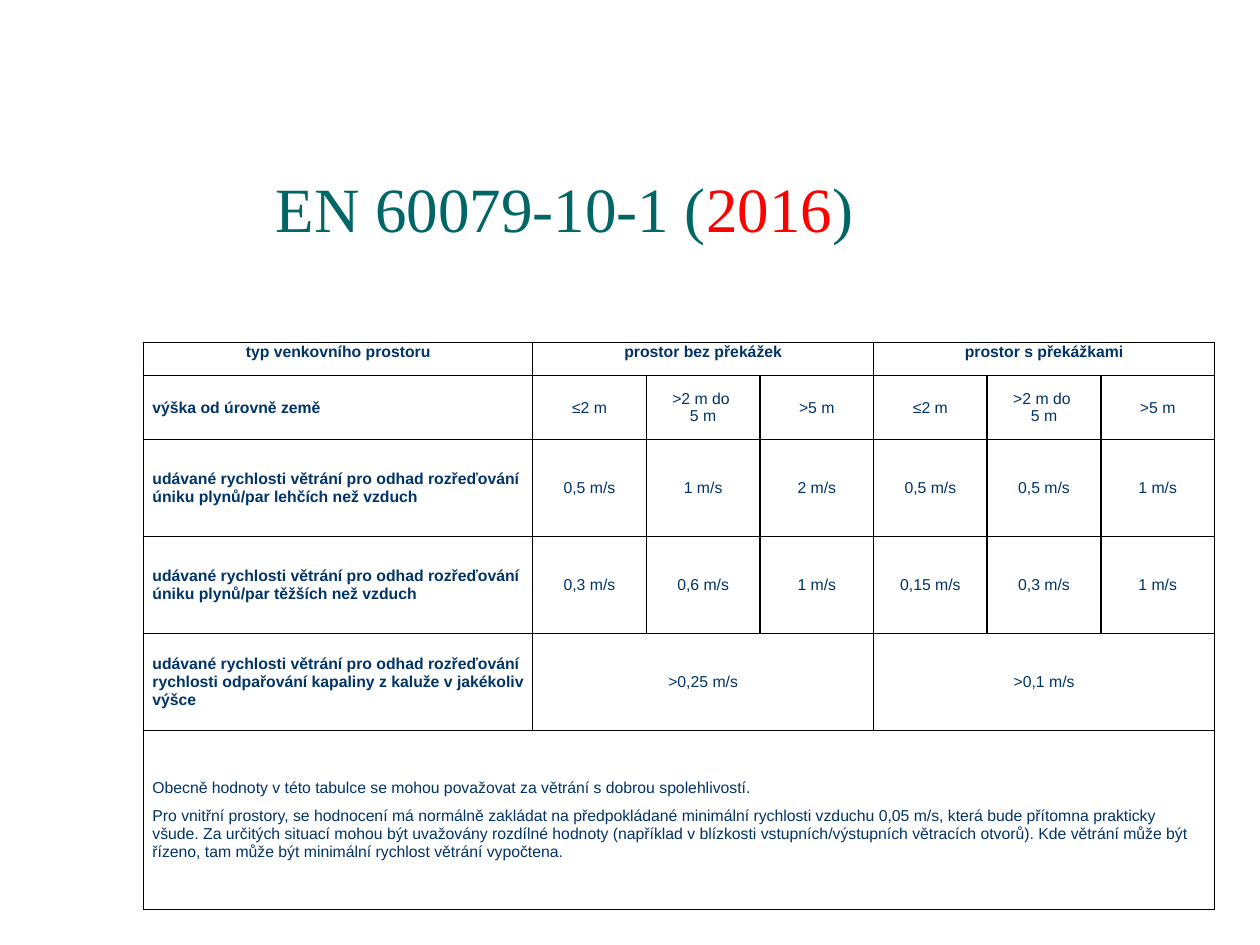
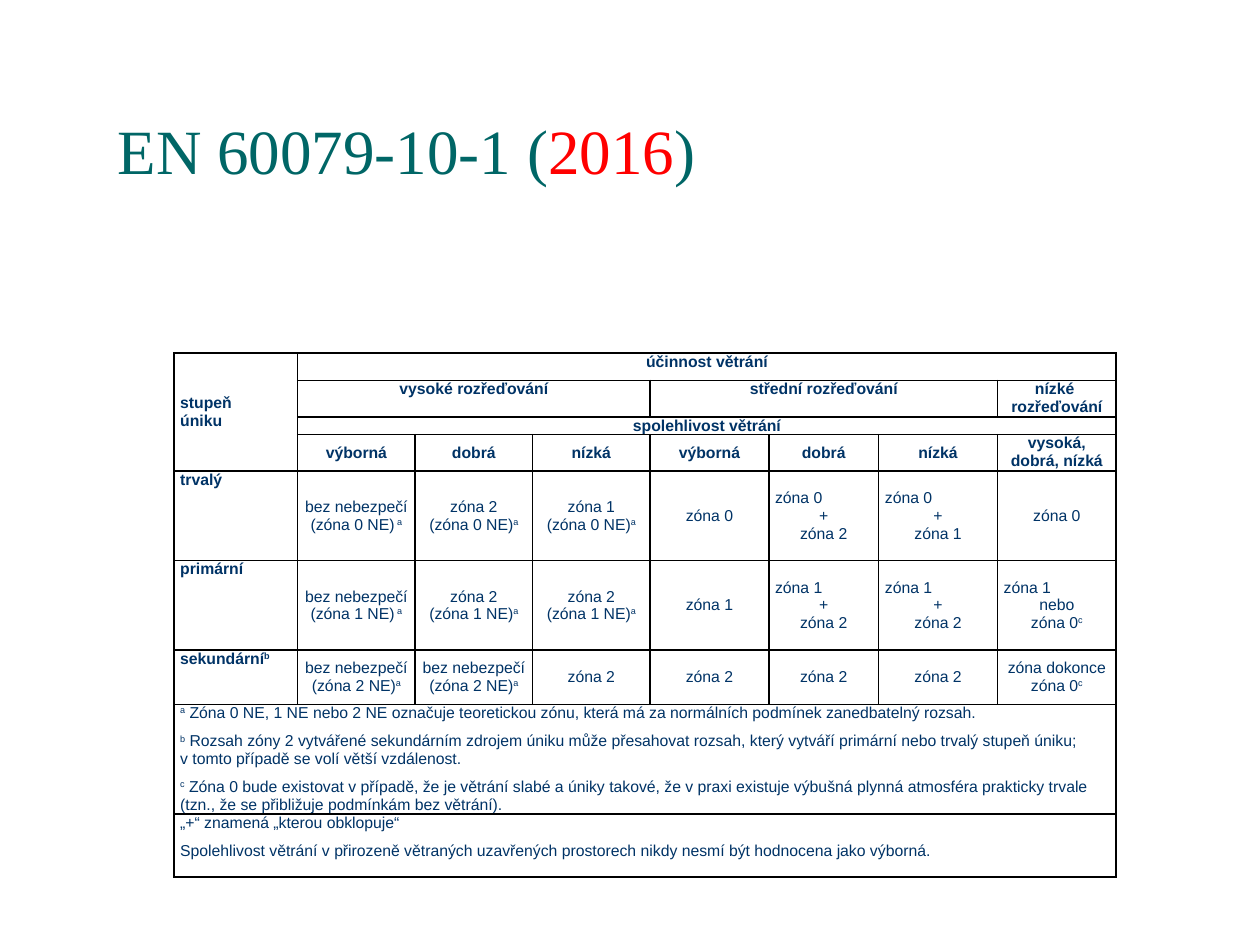
from copy import deepcopy
from dataclasses import dataclass
from enum import Enum

from lxml.etree import SubElement
from pptx import Presentation
from pptx.dml.color import RGBColor
from pptx.enum.shapes import MSO_SHAPE
from pptx.enum.text import MSO_ANCHOR, PP_ALIGN
from pptx.oxml import parse_xml
from pptx.oxml.ns import nsdecls, qn
from pptx.util import Inches, Pt


@dataclass(frozen=True)
class Theme:
    """Colours, fonts and type sizes shared by the slides."""
    heading: RGBColor = RGBColor(0x00, 0x66, 0x66)
    accent: RGBColor = RGBColor(0xFF, 0x00, 0x00)
    body: RGBColor = RGBColor(0x00, 0x33, 0x66)
    border: str = "000000"
    border_width: int = Pt(1)
    heading_font: str = "Times New Roman"
    body_font: str = "Arial"
    heading_size: int = Pt(36)
    body_size: int = Pt(9)
    cell_gap: int = Pt(3)
    tab_width: int = Inches(1)
    language: str = "cs-CZ"


class Merged(Enum):
    """Grid positions that belong to a neighbouring cell."""
    LEFT = "left"
    UP = "up"


LEFT, UP = Merged.LEFT, Merged.UP


class Deck:
    """Style and current slide, with one method for each kind of element."""

    def __init__(self, theme):
        self.theme = theme
        self.presentation = Presentation()
        self.presentation.slide_width = Inches(10)
        self.presentation.slide_height = Inches(7.5)
        self.slide = None

    def new_slide(self):
        """Start a blank slide."""
        self.slide = self.presentation.slides.add_slide(self.presentation.slide_layouts[6])

    def run(self, paragraph, text, font, size, color, bold=False):
        """Add one styled run."""
        run = paragraph.add_run()
        run.text = text
        run.font.name, run.font.size, run.font.bold = font, size, bold
        run.font.color.rgb = color
        run._r.rPr.set("lang", self.theme.language)
        return run

    def title(self, left, top, width, height):
        """Add the standard's number with its year accented."""
        theme = self.theme
        heading = self.slide.shapes.add_shape(
            MSO_SHAPE.ROUNDED_RECTANGLE, *map(Inches, (left, top, width, height)))
        heading.adjustments[0] = 0.22
        heading.shadow.inherit = False
        heading.fill.background()
        heading.line.fill.background()
        frame = heading.text_frame
        frame.word_wrap = True
        frame.margin_left = frame.margin_right = Inches(0.06)
        frame.margin_top = frame.margin_bottom = 0
        frame.vertical_anchor = MSO_ANCHOR.BOTTOM
        paragraph = frame.paragraphs[0]
        paragraph.alignment = PP_ALIGN.LEFT
        paragraph.line_spacing = 0.9
        for text, color in (("EN 60079-10-1 (", theme.heading), ("2016", theme.accent),
                            (")", theme.heading)):
            self.run(paragraph, text, theme.heading_font, theme.heading_size, color)

    def rich_text(self, paragraph, text, bold):
        """Write text: carets enclose superscript, a tilde is a no-break space."""
        theme = self.theme
        for part_number, part in enumerate(text.replace("~", chr(160)).split("^")):
            for line_number, line in enumerate(part.split("\n")):
                if line_number:
                    paragraph.add_line_break()
                    paragraph._p[-1].append(deepcopy(run._r.rPr))
                if line:
                    run = self.run(paragraph, line, theme.body_font, theme.body_size,
                                   theme.body, bold)
                    if part_number % 2:
                        run._r.rPr.set("baseline", "30000")

    def borders(self, cell):
        """Draw the four edges of a cell."""
        properties = cell._tc.get_or_add_tcPr()
        for position, edge in enumerate(("lnL", "lnR", "lnT", "lnB")):
            line = parse_xml(f'<a:{edge} {nsdecls("a")} w="{self.theme.border_width}"/>')
            fill = SubElement(line, qn("a:solidFill"))
            SubElement(fill, qn("a:srgbClr")).set("val", self.theme.border)
            properties.insert(position, line)

    def cell_text(self, cell, content, align, anchor, bold, inset):
        """Fill a cell with one paragraph or a list of them."""
        cell.margin_left = cell.margin_right = Inches(inset)
        cell.margin_top = cell.margin_bottom = 0
        cell.vertical_anchor = anchor
        frame = cell.text_frame
        for number, text in enumerate(content if isinstance(content, list) else [content]):
            paragraph = frame.add_paragraph() if number else frame.paragraphs[0]
            paragraph.alignment = align
            paragraph.space_before = paragraph.space_after = self.theme.cell_gap
            paragraph._p.pPr.set("defTabSz", str(self.theme.tab_width))
            self.rich_text(paragraph, text, bold)

    def table(self, left, top, width, height, columns, heights, grid, header_rows, top_cells,
              inset):
        """Add a bordered table whose merged cells follow the grid's markers."""
        frame = self.slide.shapes.add_table(
            len(heights), len(columns), *map(Inches, (left, top, width, height)))
        table = frame.table
        table.first_row = table.horz_banding = False
        for column, share in zip(table.columns, columns):
            column.width = Inches(width * share / sum(columns))
        for row, row_height in zip(table.rows, heights):
            row.height = Inches(row_height)
        frame.height = Inches(height)
        for r, contents in enumerate(grid):
            for c, content in enumerate(contents):
                cell = table.cell(r, c)
                self.borders(cell)
                cell.fill.background()
                if isinstance(content, Merged):
                    continue
                last_row, last_column = r, c
                while last_column + 1 < len(columns) and contents[last_column + 1] is LEFT:
                    last_column += 1
                while last_row + 1 < len(heights) and grid[last_row + 1][c] is UP:
                    last_row += 1
                if (last_row, last_column) != (r, c):
                    cell.merge(table.cell(last_row, last_column))
                note = last_column - c + 1 == len(columns)
                centred = c > 0 or (r < header_rows and last_row == r)
                self.cell_text(
                    cell, content,
                    PP_ALIGN.CENTER if centred else PP_ALIGN.LEFT,
                    MSO_ANCHOR.TOP if (r, c) in top_cells else MSO_ANCHOR.MIDDLE,
                    r < header_rows or (c == 0 and not note), inset)


def air_speed_slide(deck):
    """Build the table of outdoor ventilation velocities."""
    deck.new_slide()
    deck.title(2.08, 1.25, 5.83, 0.75)
    heights_above_ground = ["≤2 m", ">2 m do \n5 m", ">5 m"]
    estimate = "udávané rychlosti větrání pro odhad rozřeďování "
    grid = [
        ["typ venkovního prostoru", "prostor bez překážek", LEFT, LEFT,
         "prostor s překážkami", LEFT, LEFT],
        ["výška od úrovně země"] + heights_above_ground * 2,
        [estimate + "úniku plynů/par lehčích než vzduch",
         "0,5 m/s", "1 m/s", "2 m/s", "0,5 m/s", "0,5 m/s", "1 m/s"],
        [estimate + "úniku plynů/par těžších než vzduch",
         "0,3 m/s", "0,6 m/s", "1 m/s", "0,15 m/s", "0,3 m/s", "1 m/s"],
        [estimate + "rychlosti odpařování kapaliny z kaluže v jakékoliv výšce",
         ">0,25 m/s", LEFT, LEFT, ">0,1 m/s", LEFT, LEFT],
        [["Obecně hodnoty v této tabulce se mohou považovat za větrání s dobrou spolehlivostí.",
          "Pro vnitřní prostory, se hodnocení má normálně zakládat na předpokládané minimální "
          "rychlosti vzduchu 0,05 m/s, která bude přítomna prakticky všude. Za určitých situací "
          "mohou být uvažovány rozdílné hodnoty (například v blízkosti vstupních/výstupních "
          "větracích otvorů). Kde větrání může být řízeno, tam může být minimální rychlost "
          "větrání vypočtena."]] + [LEFT] * 6,
    ]
    deck.table(1.14, 2.72, 8.5, 4.49, [3.08] + [0.9] * 6,
               [0.26, 0.51, 0.77, 0.77, 0.77, 1.42], grid,
               header_rows=1, top_cells={(0, 0), (0, 1), (0, 4)}, inset=0.07)


def zone_slide(deck):
    """Build the table of zones by release grade and ventilation."""
    deck.new_slide()
    deck.title(0.83, 0.83, 8.67, 0.71)
    availability = ["výborná", "dobrá", "nízká"]
    grid = [
        ["stupeň \núniku", "účinnost větrání"] + [LEFT] * 6,
        [UP, "vysoké rozřeďování", LEFT, LEFT, "střední rozřeďování", LEFT, LEFT,
         "nízké \nrozřeďování"],
        [UP, "spolehlivost větrání"] + [LEFT] * 6,
        [UP] + availability * 2 + ["vysoká, dobrá, nízká"],
        ["trvalý", "bez nebezpečí\n(zóna 0 NE)^ a^", "zóna 2\n(zóna 0 NE)^a^",
         "zóna 1\n(zóna 0 NE)^a^", "zóna 0", "zóna 0\t\n+\nzóna 2", "zóna 0\t\n+\nzóna 1",
         "zóna 0"],
        ["primární", "bez nebezpečí\n(zóna 1 NE)^ a^", "zóna 2\n(zóna 1 NE)^a^",
         "zóna 2\n(zóna 1 NE)^a^", "zóna 1", "zóna 1\t\n+\nzóna 2", "zóna 1\t\n+\nzóna 2",
         "zóna 1\t nebo\nzóna 0^c^"],
        ["sekundární^b^"] + ["bez nebezpečí\n(zóna 2 NE)^a^"] * 2 + ["zóna 2"] * 4
        + ["zóna dokonce\nzóna 0^c^"],
        [["^a^ Zóna 0 NE, 1 NE nebo 2 NE označuje teoretickou zónu, která má za normálních "
          "podmínek zanedbatelný rozsah.",
          "^b^ Rozsah zóny 2 vytvářené sekundárním zdrojem úniku může přesahovat rozsah, který "
          "vytváří primární nebo trvalý stupeň úniku; v~tomto případě se volí větší vzdálenost.",
          "^c^ Zóna 0 bude existovat v~případě, že je větrání slabé a úniky takové, že v~praxi "
          "existuje výbušná plynná atmosféra prakticky trvale (tzn., že se přibližuje podmínkám "
          "bez větrání)."]] + [LEFT] * 7,
        [["„+“ znamená „kterou obklopuje“",
          "Spolehlivost větrání v přirozeně větraných uzavřených prostorech nikdy nesmí být "
          "hodnocena jako výborná."]] + [LEFT] * 7,
    ]
    top_headers = {(0, 1), (1, 1), (1, 4), (1, 7), (2, 1), (3, 7)}
    top_labels = {(row, 0) for row in range(4, 9)}
    deck.table(1.38, 2.8, 7.48, 4.32, [0.98, 0.93, 0.93, 0.93, 0.94, 0.87, 0.94, 0.94],
               [0.22, 0.29, 0.14, 0.29, 0.71, 0.71, 0.43, 0.87, 0.5], grid,
               header_rows=4, top_cells=top_headers | top_labels, inset=0.05)


def main():
    """Build both slides and save the deck."""
    deck = Deck(Theme())
    air_speed_slide(deck)
    zone_slide(deck)
    deck.presentation.save("out.pptx")


if __name__ == "__main__":
    main()
